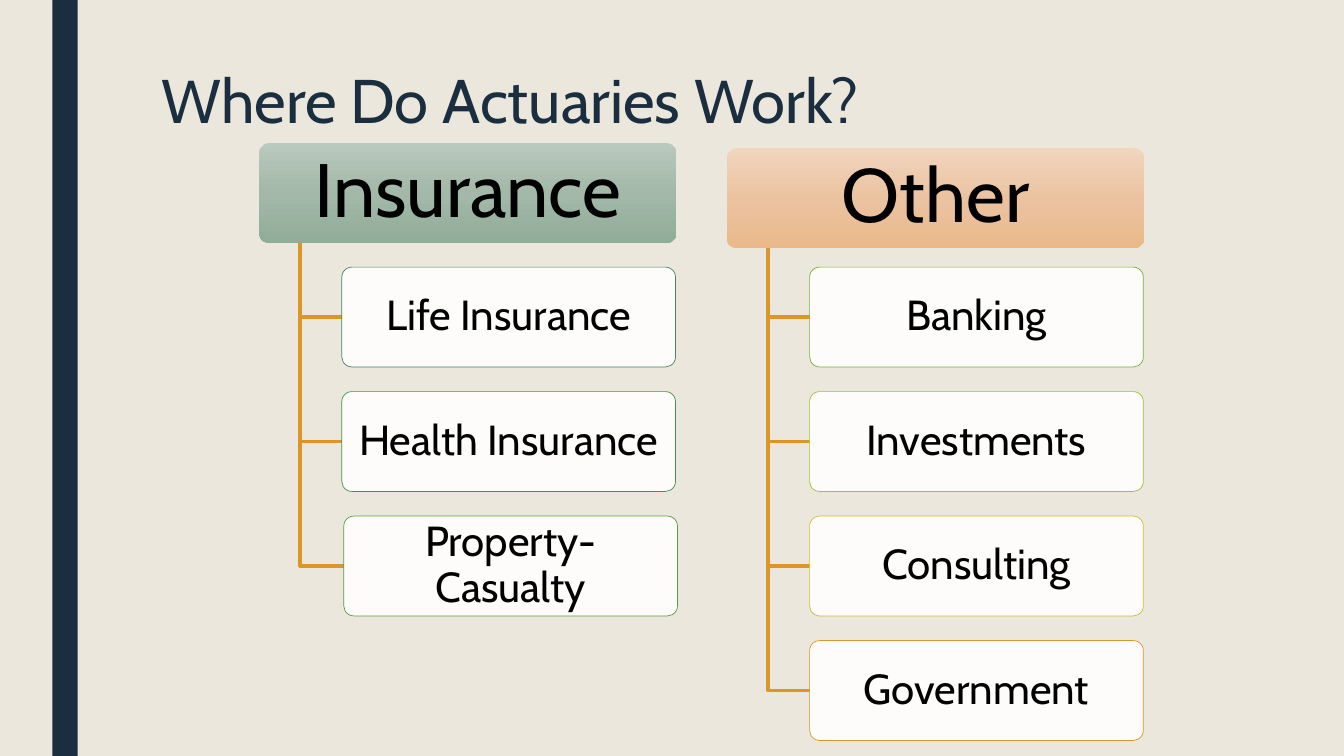
from copy import deepcopy
from pptx import Presentation, util as u
from pptx.dml.color import RGBColor
from pptx.enum import shapes, text
from pptx.oxml.ns import qn
from lxml import etree

HUES = {
    "back": "EBE7DD", "navy": "1A2E40", "ink": "000000",
    "card": "FFFFFF", "link": "DC9528",
}
FONT = "Cabin"
HIGH, STEP, TOP = 0.99, 1.235, 2.65
HEAD, WIDE, STEM = 4.14, 3.31, 0.41

# label, left, top, gradient, items as (label, outline, shift to the right)
GROUPS = [
    ("Insurance", 2.57, 1.42, ["B9C9BD", "A3B8A9", "90AD98"], [
        ("Life Insurance", "4A845E", 0),
        ("Health Insurance", "45924A", 0),
        ("Property-Casualty", "57A040", 0.02)]),
    ("Other", 7.21, 1.47, ["F1D5BE", "EBC3A1", "EAB98A"], [
        ("Banking", "77AF3A", 0),
        ("Investments", "A5BE34", 0),
        ("Consulting", "CFBE2C", 0),
        ("Government", "DC9528", 0)]),
]


def write(shape, words, size, hue="ink", align=text.PP_ALIGN.CENTER,
          anchor=text.MSO_ANCHOR.MIDDLE, pad=(0.1, 0.05), line=0.9):
    frame = shape.text_frame
    frame.word_wrap = True
    frame.auto_size = text.MSO_AUTO_SIZE.NONE
    frame.vertical_anchor = anchor
    frame.margin_left = frame.margin_right = u.Inches(pad[0])
    frame.margin_top = frame.margin_bottom = u.Inches(pad[1])
    para = frame.paragraphs[0]
    para.alignment, para.line_spacing = align, line
    run = para.add_run()
    run.text = words
    run.font.name, run.font.size = FONT, u.Pt(size)
    run.font.color.rgb = RGBColor.from_string(HUES[hue])


def block(kind, left, top, wide, high):
    """Add a preset shape without shadow or outline."""
    shape = slide.shapes.add_shape(kind, *map(u.Inches, (left, top, wide, high)))
    shape.shadow.inherit = False
    shape.line.fill.background()
    if kind == shapes.MSO_SHAPE.ROUNDED_RECTANGLE:
        shape.adjustments[0] = 0.1
    return shape


deck = Presentation()
deck.slide_width, deck.slide_height = u.Inches(13.33), u.Inches(7.5)
slide = deck.slides.add_slide(deck.slide_layouts[5])
slide.background.fill.solid()
slide.background.fill.fore_color.rgb = RGBColor.from_string(HUES["back"])

band = block(shapes.MSO_SHAPE.RECTANGLE, 0.52, 0, 0.25, 7.5)
band.fill.solid()
band.fill.fore_color.rgb = RGBColor.from_string(HUES["navy"])

title = slide.shapes.title
title.left, title.top = u.Inches(1.5), u.Inches(0.65)
title.width, title.height = u.Inches(10.5), u.Inches(1.62)
write(title, "Where Do Actuaries Work?", 44, hue="navy", line=0.89,
      align=text.PP_ALIGN.LEFT, anchor=text.MSO_ANCHOR.TOP)

for label, left, top, blend, items in GROUPS:
    head = block(shapes.MSO_SHAPE.ROUNDED_RECTANGLE, left, top, HEAD, HIGH)
    head.fill.gradient()
    head.fill.gradient_angle = 270
    stops = next(head._element.spPr.iter(qn("a:gsLst")))
    stops.insert(1, deepcopy(stops[0]))
    for i, (stop, hue) in enumerate(zip(head.fill.gradient_stops, blend)):
        stop.position = i / 2
        stop.color.rgb = RGBColor.from_string(hue)
    write(head, label, 54, pad=(0.14, 0.1))

    trunk = left + STEM
    for row, (words, edge, shift) in enumerate(items):
        y = TOP + row * STEP
        x = trunk + STEM + shift
        mid = y + HIGH / 2
        path = slide.shapes.build_freeform(u.Inches(trunk), u.Inches(top + HIGH))
        path.add_line_segments(
            [(u.Inches(trunk), u.Inches(mid)), (u.Inches(x), u.Inches(mid))],
            close=False)
        link = path.convert_to_shape()
        link.shadow.inherit = False
        link.fill.background()
        link.line.color.rgb = RGBColor.from_string(HUES["link"])
        link.line.width = u.Pt(2.75)

        card = block(shapes.MSO_SHAPE.ROUNDED_RECTANGLE, x, y, WIDE, HIGH)
        card.fill.solid()
        card.fill.fore_color.rgb = RGBColor.from_string(HUES["card"])
        tint = card._element.spPr.find(qn("a:solidFill"))[0]
        etree.SubElement(tint, qn("a:alpha"), val="90000")
        card.line.color.rgb = RGBColor.from_string(edge)
        card.line.width = u.Pt(0.5)
        write(card, words, 30, pad=(0.09, 0.07))

deck.save("out.pptx")
